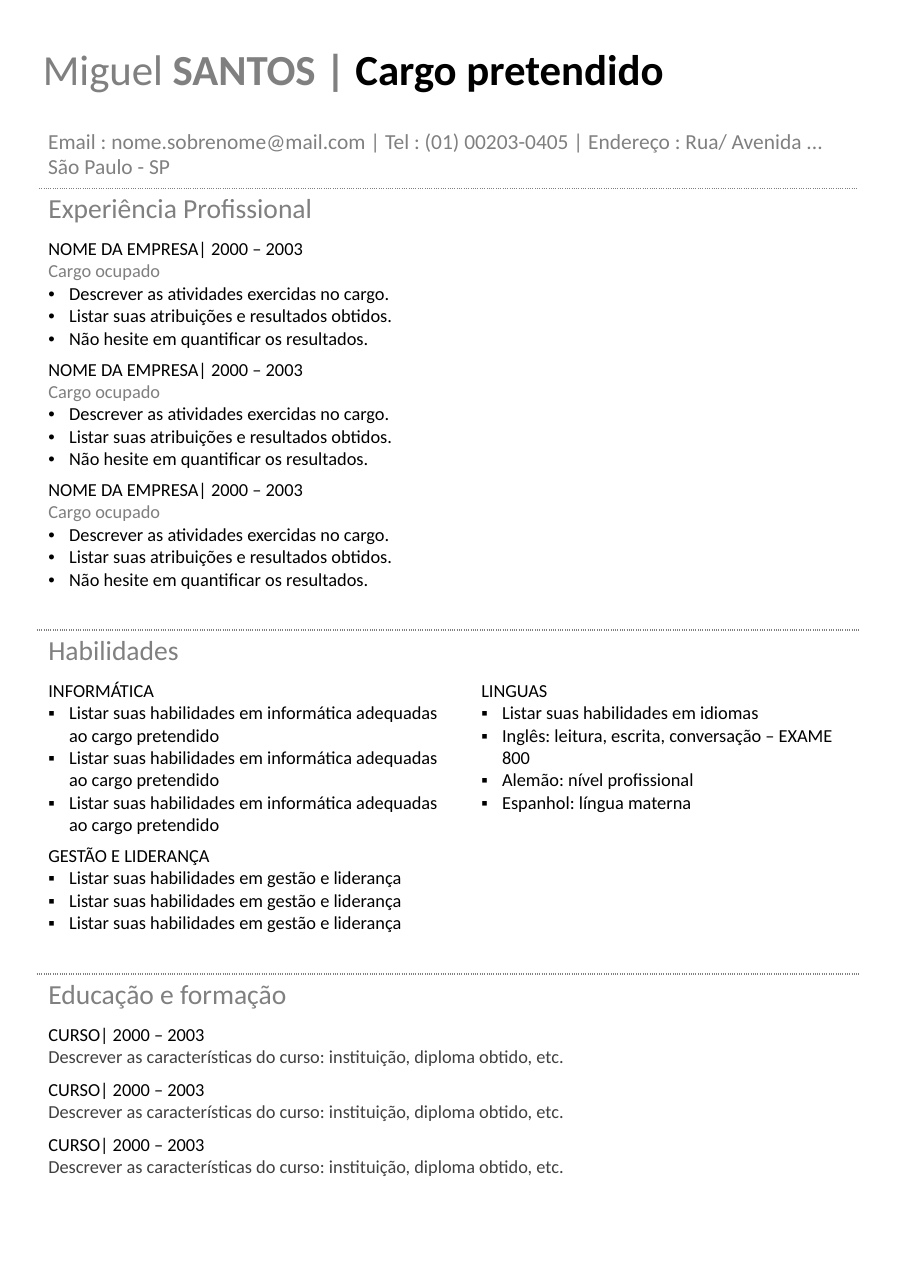
"""Build a one-page résumé slide with a title, contact details and a sectioned table."""
from dataclasses import dataclass

from pptx import Presentation
from pptx.dml.color import RGBColor
from pptx.enum.text import MSO_AUTO_SIZE as AutoSize
from pptx.oxml import parse_xml
from pptx.oxml.ns import nsdecls
from pptx.oxml.xmlchemy import OxmlElement
from pptx.util import Cm, Pt


@dataclass(frozen=True)
class Theme:
    font: str = "Calibri"
    gray: str = "808080"
    role: str = "7F7F7F"
    dark: str = "404040"
    black: str = "000000"
    title: int = 28
    heading: int = 18
    contact: int = 14
    body: int = 12


theme = Theme()


def add_run(paragraph, text, size, color, bold=False):
    run = paragraph.add_run()
    run.text = text
    run.font.color.rgb = RGBColor.from_string(color)
    for name, value in {"name": theme.font, "size": Pt(size), "bold": bold}.items():
        setattr(run.font, name, value)


def add_border(cell, side):
    cell._tc.get_or_add_tcPr().insert(0, parse_xml(
        f'<a:ln{side} {nsdecls("a")} w="12700"><a:solidFill><a:srgbClr val="{theme.gray}"/>'
        f'</a:solidFill><a:prstDash val="sysDot"/></a:ln{side}>'))


line_styles = {
    "heading": (theme.heading, theme.gray, None),
    "label": (theme.body, theme.black, None),
    "role": (theme.body, theme.role, None),
    "detail": (theme.body, theme.dark, None),
    "dot": (theme.body, theme.black, "•"),
    "square": (theme.body, theme.black, "▪"),
}

job = [
    ("label", "NOME DA EMPRESA| 2000 – 2003"),
    ("role", "Cargo ocupado"),
    ("dot", "Descrever as atividades exercidas no cargo."),
    ("dot", "Listar suas atribuições e resultados obtidos."),
    ("dot", "Não hesite em quantificar os resultados."),
]
computing = [("label", "INFORMÁTICA")] + 3 * [
    ("square", "Listar suas habilidades em informática adequadas ao cargo pretendido")]
languages = [
    ("label", "LINGUAS"),
    ("square", "Listar suas habilidades em idiomas"),
    ("square", "Inglês: leitura, escrita, conversação – EXAME 800"),
    ("square", "Alemão: nível profissional"),
    ("square", "Espanhol: língua materna"),
]
leadership = [("label", "GESTÃO E LIDERANÇA")] + 3 * [
    ("square", "Listar suas habilidades em gestão e liderança")]
course = [
    ("label", "CURSO| 2000 – 2003"),
    ("detail", "Descrever as características do curso: instituição, diploma obtido, etc."),
]

heading_height, spacer_height = 1.05, 0.8
spacer = (spacer_height, [])
rows = [
    (heading_height, [("heading", "Experiência Profissional")]),
    *3 * [(2.78, job)],
    spacer,
    (heading_height, [("heading", "Habilidades")]),
    (3.81, computing),
    (2.27, leadership),
    spacer,
    (heading_height, [("heading", "Educação e formação")]),
    *3 * [(1.27, course)],
]
computing_row, leadership_row = 6, 7

presentation = Presentation()
presentation.slide_width, presentation.slide_height = Cm(21), Cm(29.7)
slide = presentation.slides.add_slide(presentation.slide_layouts[6])

title = slide.shapes.add_textbox(Cm(0.74), Cm(0.86), Cm(14.99), Cm(1.45)).text_frame
title.word_wrap = False
title.auto_size = AutoSize.SHAPE_TO_FIT_TEXT
for text, color, bold in [
    ("Miguel ", theme.gray, False),
    ("SANTOS | ", theme.gray, True),
    ("Cargo pretendido", theme.black, True),
]:
    add_run(title.paragraphs[0], text, theme.title, color, bold)

contact = slide.shapes.add_textbox(Cm(0.86), Cm(2.82), Cm(19.38), Cm(1.45)).text_frame
contact.word_wrap = True
contact.auto_size = AutoSize.SHAPE_TO_FIT_TEXT
contact_line = contact.paragraphs[0]
add_run(contact_line,
        "Email : nome.sobrenome@mail.com | Tel : (01) 00203-0405 | Endereço : Rua/ Avenida ...",
        theme.contact, theme.gray)
contact_line.add_line_break()
add_run(contact_line, "São Paulo - SP", theme.contact, theme.gray)

table_height = Cm(sum(height for height, lines in rows))
table = slide.shapes.add_table(
    len(rows), 2, Cm(0.86), Cm(4.34), Cm(18.92), table_height).table
table.first_row = table.horz_banding = False
for column, width in zip(table.columns, (9.98, 8.94)):
    column.width = Cm(width)

for index, (height, lines) in enumerate(rows):
    table.rows[index].height = Cm(height)
    left, right = table.cell(index, 0), table.cell(index, 1)
    if index == computing_row:
        right.merge(table.cell(leadership_row, 1))
    elif index != leadership_row:
        left.merge(right)
    contents = [lines, languages if index == computing_row else []]
    for cell, cell_lines in zip((left, right), contents):
        cell.margin_top = cell.margin_bottom = Cm(0.1)
        cell.fill.background()
        if height == heading_height:
            add_border(cell, "T")
        elif height == spacer_height:
            add_border(cell, "B")
        frame = cell.text_frame
        if not cell_lines:
            end_format = OxmlElement("a:endParaRPr")
            end_format.set("sz", str(theme.body * 100))
            frame.paragraphs[0]._p.append(end_format)
        for position, (style, text) in enumerate(cell_lines):
            paragraph = frame.add_paragraph() if position else frame.paragraphs[0]
            size, color, bullet = line_styles[style]
            if bullet:
                properties = paragraph._p.get_or_add_pPr()
                properties.set("marL", str(Cm(0.48)))
                properties.set("indent", str(-Cm(0.48)))
                for tag, key, value in [("a:buFont", "typeface", "Arial"),
                                        ("a:buChar", "char", bullet)]:
                    element = OxmlElement(tag)
                    element.set(key, value)
                    properties.append(element)
            add_run(paragraph, text, size, color)

presentation.save("out.pptx")
